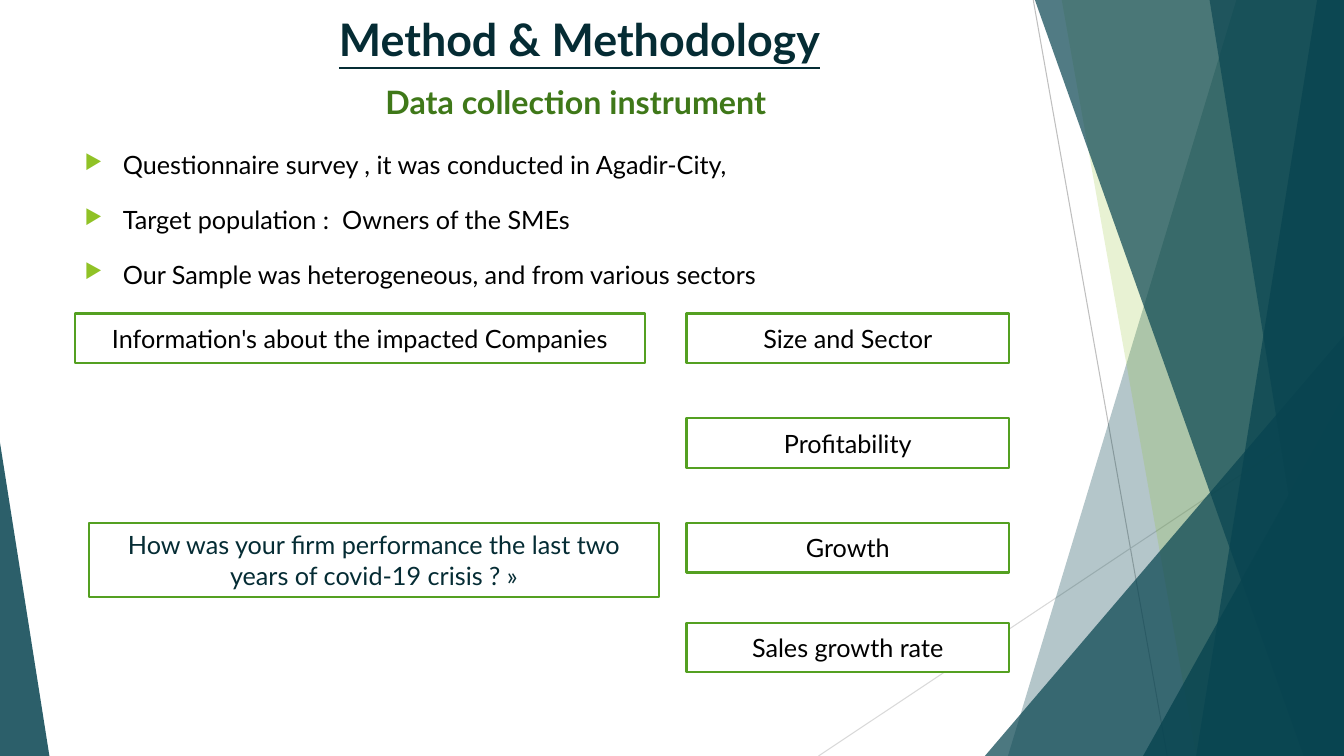
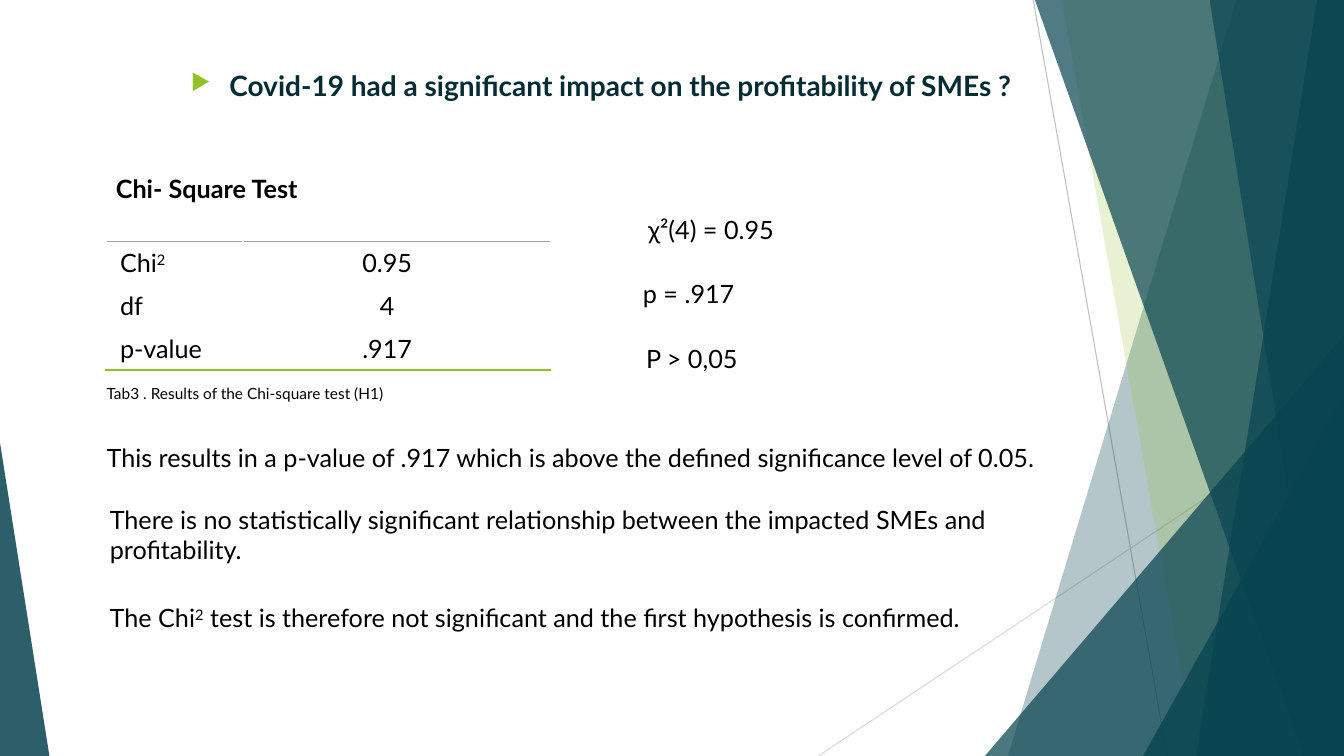
"""Build two slides on a survey method and its chi-square test."""
from lxml.etree import SubElement
from pptx import Presentation
from pptx.dml.color import RGBColor
from pptx.enum.shapes import MSO_CONNECTOR as Connector, MSO_SHAPE as Preset
from pptx.enum.text import MSO_ANCHOR as Anchor, PP_ALIGN as Align
from pptx.oxml.ns import qn
from pptx.util import Inches, Pt

FONT = "Lato"
TEAL = RGBColor(0x08, 0x44, 0x50)
LIME = RGBColor(0x90, 0xC2, 0x26)
GREEN = RGBColor(0x54, 0xA0, 0x21)
MOSS = RGBColor(0x3F, 0x78, 0x19)
INK = RGBColor(0x05, 0x2C, 0x34)
BLACK = RGBColor(0, 0, 0)
WHITE = RGBColor(0xFF, 0xFF, 0xFF)
GREY = RGBColor(0xA0, 0xA0, 0xA0)
SILVER = RGBColor(0xBF, 0xBF, 0xBF)
PALE = RGBColor(0xD9, 0xD9, 0xD9)

deck = Presentation()
deck.slide_width, deck.slide_height = Inches(13.333), Inches(7.5)
COLUMN, ROW = deck.slide_width / 100, deck.slide_height / 100

STYLES = {
    "title": (32, INK, True, Align.CENTER),
    "subtitle": (23, MOSS, True, Align.CENTER),
    "heading": (20, INK, True, Align.CENTER),
    "point": (18, BLACK, False, Align.JUSTIFY),
    "label": (18, BLACK, True, Align.LEFT),
    "body": (18, BLACK, False, Align.LEFT),
    "center": (18, BLACK, False, Align.CENTER),
    "question": (18, INK, False, Align.CENTER),
    "caption": (11, BLACK, False, Align.LEFT),
}


def area(left, top, width, height):
    return (round(left * COLUMN), round(top * ROW),
            round(width * COLUMN), round(height * ROW))


def write(frame, text, style):
    size, color, bold, align = STYLES[style]
    frame.word_wrap = True
    para = frame.paragraphs[0]
    para.alignment = align
    for index, piece in enumerate(text.split("^")):
        span = para.add_run()
        span.text = piece
        span.font.name, span.font.size = FONT, Pt(size)
        span.font.bold, span.font.color.rgb = bold, color
        span.font.underline = style == "title"
        if index % 2:
            span.font._element.set("baseline", "30000")
    if style in ("point", "heading"):
        if style == "point":
            para.line_spacing = 1.07
        props = para._p.get_or_add_pPr()
        props.set("marL", str(Inches(0.38)))
        props.set("indent", str(-Inches(0.38)))
        tint = SubElement(props, qn("a:buClr"))
        SubElement(tint, qn("a:srgbClr")).set("val", str(LIME))
        SubElement(props, qn("a:buSzPct")).set("val", "80000")
        SubElement(props, qn("a:buChar")).set("char", "▶")


RAYS = [(76.88, 0, 86.85, 100, SILVER), (100, 53.73, 60.9, 100, PALE)]
PANES = [
    ("ribbon", 92.1, 75.3, 0, TEAL, 30),
    ("ribbon", 78.75, 88.73, 0, LIME, 20),
    ("wedge", 73.28, 100, 44.4, TEAL, 72),
    ("ribbon", 76.58, 96.83, 0, TEAL, 70),
    ("ribbon", 97.73, 89.4, 0, TEAL, 70),
    ("ribbon", 89.7, 98.85, 0, TEAL, 65),
    ("wedge", 85.05, 100, 52.4, TEAL, 80),
    ("wedge", 0, 3.68, 58.53, TEAL, 85),
]

POINTS = [
    "Questionnaire survey , it was conducted in Agadir-City,",
    "Target population :  Owners of the SMEs",
    "Our Sample was heterogeneous, and from various sectors",
]
METHOD_TEXTS = [
    (8.18, 0.93, 69.9, 8.4, "Method & Methodology", "title"),
    (24.68, 10.27, 36.38, 6.67, "Data collection instrument", "subtitle"),
] + [(5.55, 18.8 + 7.27 * index, 75.2, 5.33, point, "point")
     for index, point in enumerate(POINTS)]
RESULT_TEXTS = [
    (12, 8.4, 65.48, 6.93,
     "Covid-19 had a significant impact on the profitability of SMEs ?", "heading"),
    (7.88, 22.27, 27.3, 5.33, "Chi- Square Test", "label"),
    (47.48, 27.73, 12.3, 5.6, "χ²(4) = 0.95", "body"),
    (47.1, 36.13, 12.3, 5.33, "p = .917", "body"),
    (47.33, 44.8, 12.3, 5.33, "P > 0,05", "body"),
    (7.2, 50.13, 36.98, 3.87, "Tab3 . Results of the Chi-square test (H1)", "caption"),
    (7.2, 57.87, 73.73, 5.33,
     "This results in a p-value of .917 which is above the defined "
     "significance level of 0.05.", "body"),
    (7.43, 66, 73.73, 9.47,
     "There is no statistically significant relationship between the "
     "impacted SMEs and profitability.", "body"),
    (7.43, 79.07, 76.2, 5.33,
     "The Chi^2^ test is therefore not significant and the first "
     "hypothesis is confirmed.", "body"),
]

pages = []
for texts in (METHOD_TEXTS, RESULT_TEXTS):
    page = deck.slides.add_slide(deck.slide_layouts[6])
    pages.append(page)
    for left, top, right, bottom, color in RAYS:
        ray = page.shapes.add_connector(
            Connector.STRAIGHT, *area(left, top, right, bottom))
        ray.line.color.rgb, ray.line.width = color, Pt(0.75)
        SubElement(ray.element.spPr, qn("a:effectLst"))
    for kind, left, right, top, color, opacity in PANES:
        if kind == "ribbon":
            outline = page.shapes.build_freeform(left, 0, scale=(COLUMN, ROW))
            outline.add_line_segments([(100, 0), (100, 100), (right, 100)])
            pane = outline.convert_to_shape()
        else:
            pane = page.shapes.add_shape(
                Preset.ISOSCELES_TRIANGLE, *area(left, top, right - left, 100 - top))
            pane.adjustments[0] = 1 if right == 100 else 0
        pane.shadow.inherit = False
        pane.line.fill.background()
        pane.fill.solid()
        pane.fill.fore_color.rgb = color
        tint = pane.element.spPr.find(qn("a:solidFill"))[0]
        SubElement(tint, qn("a:alpha")).set("val", str(opacity * 1000))
    for left, top, width, height, text, style in texts:
        box = page.shapes.add_textbox(*area(left, top, width, height))
        write(box.text_frame, text, style)

method, result = pages

MEASURES = [(41.47, "Size and Sector"), (55.33, "Profitability"),
            (69.2, "Growth"), (82.4, "Sales growth rate")]
BOXES = [
    (5.55, 41.47, 42.45, 6.53, "Information's about the impacted Companies", "center"),
    (6.6, 69.2, 42.45, 9.73,
     "How was your firm performance the last two years of covid-19 crisis ? »",
     "question"),
] + [(51.08, top, 24, 6.53, measure, "center") for top, measure in MEASURES]
for left, top, width, height, text, style in BOXES:
    box = method.shapes.add_shape(Preset.RECTANGLE, *area(left, top, width, height))
    box.shadow.inherit = False
    box.fill.solid()
    box.fill.fore_color.rgb = WHITE
    box.line.color.rgb, box.line.width = GREEN, Pt(1.5)
    box.text_frame.vertical_anchor = Anchor.MIDDLE
    write(box.text_frame, text, style)

TEST = [("Chi^2^", "0.95"), ("df", "4"), ("p-value", ".917")]
EDGES = {0: ("a:lnT", GREY, 0.75), len(TEST) - 1: ("a:lnB", LIME, 1.5)}
table = result.shapes.add_table(len(TEST), 2, *area(7.88, 32, 33.08, 16.93)).table
table.first_row = table.horz_banding = False
for column, share in zip(table.columns, (10.2, 22.88)):
    column.width = round(share * COLUMN)
for row, entries in enumerate(TEST):
    for column, entry in enumerate(entries):
        cell = table.cell(row, column)
        cell.margin_left = round(1.05 * COLUMN)
        cell.margin_right = round((1.05, 2.48)[column] * COLUMN)
        cell.margin_top = cell.margin_bottom = round(0.8 * ROW)
        cell.fill.background()
        write(cell.text_frame, entry, ("body", "center")[column])
        if row in EDGES:
            side, color, weight = EDGES[row]
            props = cell._tc.get_or_add_tcPr()
            edge = SubElement(props, qn(side), w=str(Pt(weight)))
            props.insert(0, edge)
            paint = SubElement(edge, qn("a:solidFill"))
            SubElement(paint, qn("a:srgbClr")).set("val", str(color))

deck.save("out.pptx")
